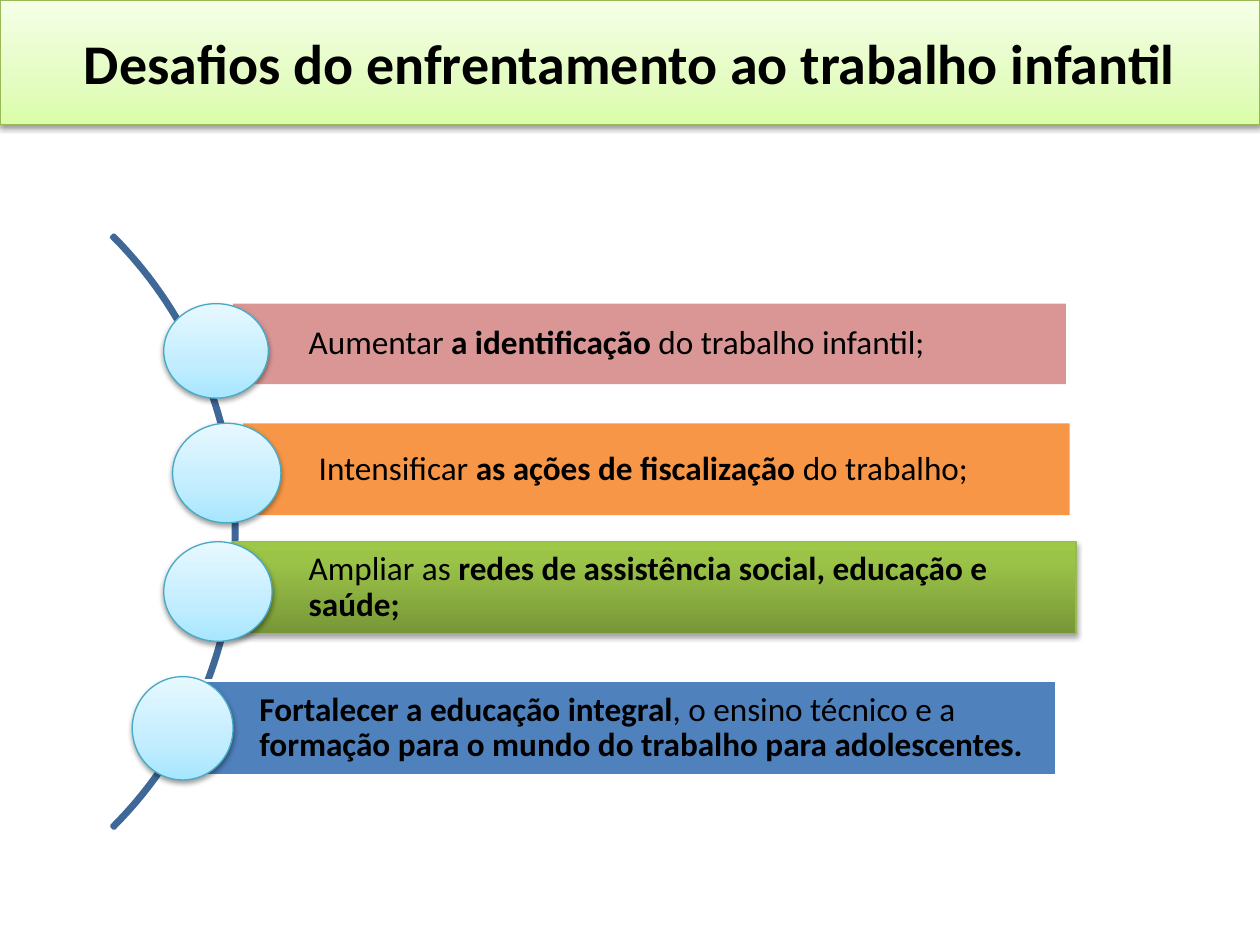
"""Build the slide on the challenges of fighting child labour."""
from lxml import etree
from pptx import Presentation
from pptx.dml.color import RGBColor
from pptx.enum import shapes, text
from pptx.oxml import ns
from pptx.util import Inches, Pt

TITLE = "Desafios do enfrentamento ao trabalho infantil"
TITLE_FILL = [(0, "DAFDA7"), (35, "E4FCC2"), (100, "F5FFE7")]
BALL_FILL = [(0, "A7E6FF"), (35, "C1EDFF"), (100, "E7F8FF")]
GREEN_FILL = [(0, "779737"), (80, "9BC348"), (100, "9DC746")]
SOFT_SHADOW = (38, 1.6)
BAR_SHADOW = (35, 1.8)

CHALLENGES = [
    dict(bar=(1.85, 2.41, 6.61, 0.64), ball=(1.3, 2.41, 0.83, 0.75), fill="D99694",
         wording=[("Aumentar ", False), ("a identificação ", True),
                  ("do trabalho infantil;", False)]),
    dict(bar=(1.93, 3.36, 6.56, 0.73), ball=(1.37, 3.36, 0.86, 0.79), fill="F79646",
         wording=[("Intensificar ", False), ("as ações de fiscalização ", True),
                  ("do trabalho;", False)]),
    dict(bar=(1.85, 4.3, 6.69, 0.73), ball=(1.3, 4.3, 0.86, 0.79), fill=GREEN_FILL,
         line=("98B955", 0.75), shadow=BAR_SHADOW,
         wording=[("Ampliar as ", False),
                  ("redes de assistência social, educação e saúde;", True)]),
    dict(bar=(1.46, 5.4, 6.93, 0.76), ball=(1.05, 5.37, 0.8, 0.82), fill="4F81BD",
         line=("FFFFFF", 2),
         wording=[("Fortalecer a educação integral", True),
                  (", o ensino técnico e a ", False),
                  ("formação para o mundo do trabalho para adolescentes.", True)]),
]


def color(code):
    return RGBColor.from_string(code)


def add_xml(parent, tag, **attributes):
    return etree.SubElement(parent, ns.qn(tag), attributes)


def paint(shape, fill, line, shadow):
    if fill is None:
        shape.fill.background()
    else:
        shape.fill.solid()
        if isinstance(fill, str):
            shape.fill.fore_color.rgb = color(fill)
        else:
            solid = shape._element.spPr.find(ns.qn("a:solidFill"))
            gradient = etree.Element(ns.qn("a:gradFill"), rotWithShape="1")
            stops = add_xml(gradient, "a:gsLst")
            for position, code in fill:
                stop = add_xml(stops, "a:gs", pos=str(position * 1000))
                add_xml(stop, "a:srgbClr", val=code)
            add_xml(gradient, "a:lin", ang="16200000", scaled="0")
            solid.getparent().replace(solid, gradient)
    if line:
        shape.line.color.rgb = color(line[0])
        shape.line.width = Pt(line[1])
    else:
        shape.line.fill.background()
    shape.shadow.inherit = False
    if shadow:
        opacity, distance = shadow
        effects = shape._element.spPr.find(ns.qn("a:effectLst"))
        outer = add_xml(effects, "a:outerShdw", blurRad=str(Pt(3.1)),
                        dist=str(Pt(distance)), dir="5400000", rotWithShape="0")
        black = add_xml(outer, "a:srgbClr", val="000000")
        add_xml(black, "a:alpha", val=str(opacity * 1000))


def add_part(slide, kind, box, fill=None, line=None, shadow=None):
    shape = slide.shapes.add_shape(kind, *map(Inches, box))
    paint(shape, fill, line, shadow)
    return shape


def write(shape, wording, size, align):
    frame = shape.text_frame
    frame.word_wrap = True
    frame.vertical_anchor = text.MSO_ANCHOR.MIDDLE
    paragraph = frame.paragraphs[0]
    paragraph.alignment = align
    for words, bold in wording:
        run = paragraph.add_run()
        run.text = words
        run.font.name = "Calibri"
        run.font.size = Pt(size)
        run.font.bold = bold
        run.font.color.rgb = color("000000")
    return frame


def main():
    deck = Presentation()
    deck.slide_width, deck.slide_height = Inches(10), Inches(7.5)
    slide = deck.slides.add_slide(deck.slide_layouts[6])
    kinds = shapes.MSO_SHAPE

    banner = add_part(slide, kinds.RECTANGLE, (0, 0, 10, 0.99), TITLE_FILL,
                      ("98B955", 0.75), SOFT_SHADOW)
    write(banner, [(TITLE, True)], 32, text.PP_ALIGN.CENTER)

    arc = add_part(slide, kinds.BLOCK_ARC, (-4.78, 0.89, 6.66, 6.66), line=("3F6797", 2))
    for index, value in enumerate((189, 27, 0.004)):
        arc.adjustments[index] = value

    for challenge in CHALLENGES:
        bar = add_part(slide, kinds.RECTANGLE, challenge["bar"], challenge["fill"],
                       challenge.get("line"), challenge.get("shadow"))
        frame = write(bar, challenge["wording"], 19, text.PP_ALIGN.LEFT)
        frame.paragraphs[0].line_spacing = 0.9
        frame.margin_left = Inches(0.6)
        frame.margin_top = frame.margin_right = frame.margin_bottom = Inches(0.05)
        add_part(slide, kinds.OVAL, challenge["ball"], BALL_FILL,
                 ("46AAC5", 0.75), SOFT_SHADOW)

    deck.save("out.pptx")


if __name__ == "__main__":
    main()
